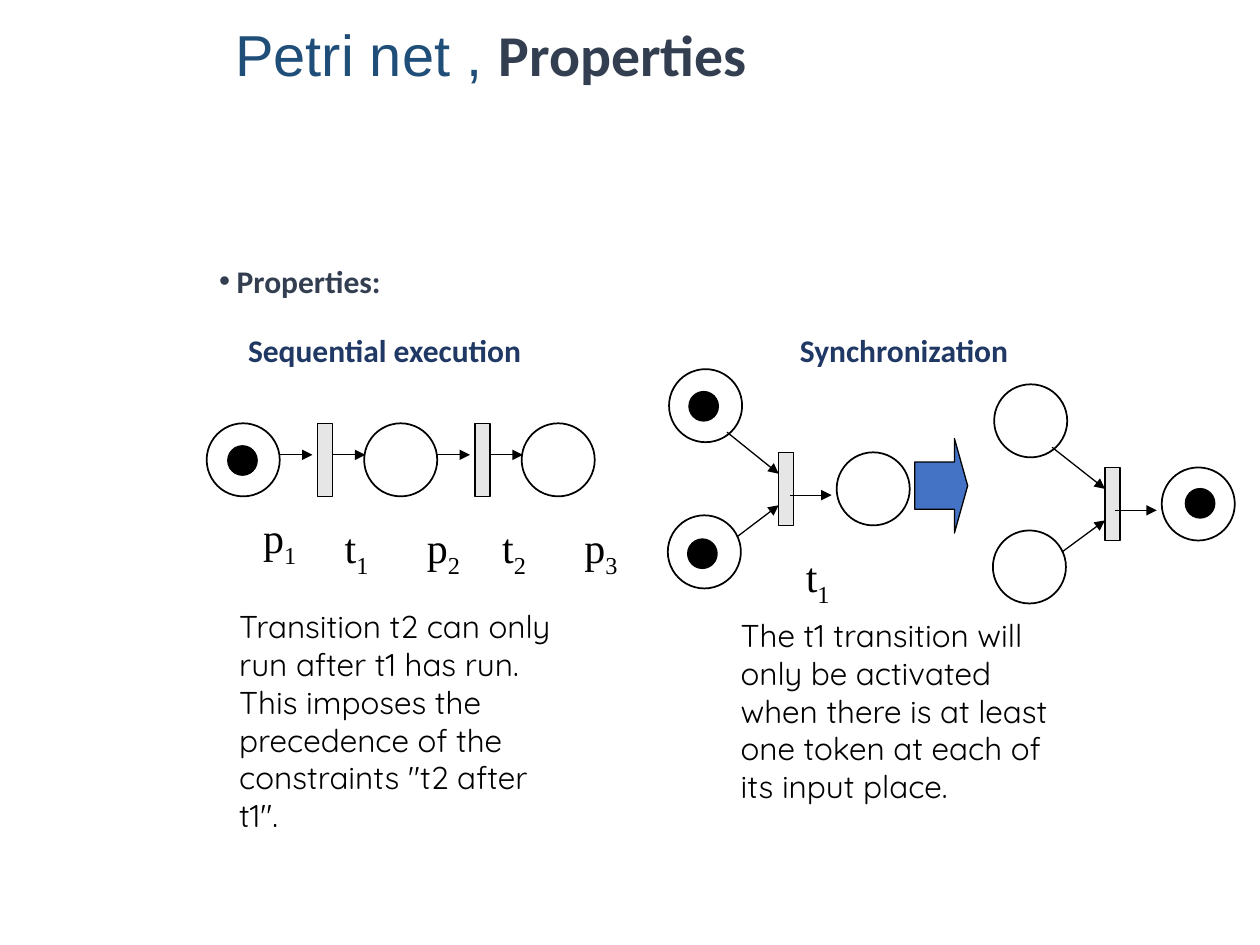
from lxml import etree
from pptx import Presentation
from pptx.dml.color import RGBColor
from pptx.enum.shapes import MSO_CONNECTOR, MSO_SHAPE
from pptx.enum.text import MSO_ANCHOR, PP_ALIGN
from pptx.oxml.ns import qn
from pptx.util import Inches, Pt

OVAL, RECTANGLE, ARROW = MSO_SHAPE.OVAL, MSO_SHAPE.RECTANGLE, MSO_SHAPE.RIGHT_ARROW
STRAIGHT = MSO_CONNECTOR.STRAIGHT
LEFT, CENTER, TOP = PP_ALIGN.LEFT, PP_ALIGN.CENTER, MSO_ANCHOR.TOP

THEME = {
    "black": "000000", "bar": "E7E6E6", "arrow": "4472C4",
    "thin": 0.75, "line": 1,
    "title": {"name": "Arial", "size": 33, "color": "1F4E79"},
    "title_bold": {"name": "Calibri", "size": 33, "color": "333F50", "bold": True},
    "bullet": {"name": "Calibri", "size": 18, "color": "333F50", "bold": True},
    "heading": {"name": "Calibri", "size": 18, "color": "203864", "bold": True},
    "body": {"name": "Quicksand", "size": 18, "color": "000000"},
    "label": {"name": "Times New Roman", "size": 24, "color": "000000"},
}

# Texts: box (left, top, width, height), then runs of (text, style)
TEXTS = [
    ((1.77, 0.1, 8.23, 1.19), [("Petri net , ", "title"), ("Properties", "title_bold")]),
    ((1.87, 2.58, 2.39, 0.4), [("Sequential execution", "heading")]),
    ((6.25, 2.58, 2.12, 0.4), [("Synchronization", "heading")]),
    ((1.8, 4.77, 2.81, 2.22), [(
        "Transition t2 can only run after t1 has run. This imposes the "
        'precedence of the constraints "t2 after t1".', "body")]),
    ((5.78, 4.84, 2.81, 1.92), [(
        "The t1 transition will only be activated when there is at least "
        "one token at each of its input place.", "body")]),
]
BULLET = ((1.64, 2.03, 1.95, 0.4), [("Properties:", "bullet")])

# Net elements: (left, top) of places, tokens and transitions
PLACE, TOKEN, BAR = (0.58, 0.58), (0.23, 0.23), (0.12, 0.58)
SEQUENCE_TOP, SEQUENCE_STEP = 3.36, 1.25
PLACES = [(1.64 + SEQUENCE_STEP * i, SEQUENCE_TOP) for i in range(3)] + [
    (5.31, 2.93), (5.3, 4.09), (6.64, 3.59),
    (7.89, 3.05), (7.88, 4.21), (9.22, 3.71)]
TOKENS = [(1.81, 3.54), (5.47, 3.11), (5.46, 4.28), (9.41, 3.88)]
BARS = [(2.52 + SEQUENCE_STEP * i, SEQUENCE_TOP) for i in range(2)] + [
    (6.18, 3.59), (8.77, 3.71)]
NEXT_STATE = (7.26, 3.48, 0.42, 0.75)

# Arcs: (from x, from y, to x, to y)
ARCS = [(x + SEQUENCE_STEP * i, 3.61, x + SEQUENCE_STEP * i + 0.26, 3.61)
        for i in range(2) for x in (2.22, 2.64)] + [
    (5.77, 3.43, 6.18, 3.76), (5.85, 4.26, 6.18, 4.01), (6.27, 3.93, 6.6, 3.93),
    (8.35, 3.55, 8.77, 3.88), (8.43, 4.38, 8.77, 4.13), (8.85, 4.05, 9.18, 4.05)]

# Labels: letter, subscript, centre x, top
LABELS = [("p", "1", 2.22, 4.06), ("t", "1", 2.83, 4.14), ("p", "2", 3.52, 4.14),
          ("t", "2", 4.08, 4.14), ("p", "3", 4.77, 4.14), ("t", "1", 6.49, 4.37)]
LABEL_SIZE = (0.6, 0.45)


def inches(values):
    return [Inches(value) for value in values]


def rgb(name):
    return RGBColor.from_string(THEME.get(name, name))


def add_run(paragraph, text, style):
    run = paragraph.add_run()
    run.text = text
    formats = dict(THEME[style])
    run.font.color.rgb = rgb(formats.pop("color"))
    formats["size"] = Pt(formats["size"])
    for name, value in formats.items():
        setattr(run.font, name, value)
    return run


def add_text(slide, box, runs, align=LEFT, **frame_formats):
    frame = slide.shapes.add_textbox(*inches(box)).text_frame
    formats = {"word_wrap": True, "vertical_anchor": TOP, **frame_formats}
    for name, value in formats.items():
        setattr(frame, name, value)
    paragraph = frame.paragraphs[0]
    paragraph.alignment = align
    for text, style in runs:
        add_run(paragraph, text, style)
    return paragraph


def add_bullet(paragraph, indent):
    properties = paragraph._p.get_or_add_pPr()
    properties.set("marL", str(Inches(indent)))
    properties.set("indent", str(-Inches(indent)))
    etree.SubElement(properties, qn("a:buFont"), typeface="Arial")
    etree.SubElement(properties, qn("a:buChar"), char="•")


def add_label(slide, letter, subscript, center, top):
    width, height = LABEL_SIZE
    paragraph = add_text(slide, (center - width / 2, top, width, height),
                         [(letter, "label")], CENTER, margin_left=0,
                         margin_right=0, margin_top=0, margin_bottom=0)
    run = add_run(paragraph, subscript, "label")
    run.font._element.set("baseline", "-25000")


def add_figure(slide, kind, box, fill, width):
    shape = slide.shapes.add_shape(kind, *inches(box))
    shape.shadow.inherit = False
    if fill:
        shape.fill.solid()
        shape.fill.fore_color.rgb = rgb(fill)
    else:
        shape.fill.background()
    shape.line.color.rgb = rgb("black")
    shape.line.width = Pt(THEME[width])
    return shape


def add_arc(slide, ends):
    connector = slide.shapes.add_connector(STRAIGHT, *inches(ends))
    connector.line.color.rgb = rgb("black")
    connector.line.width = Pt(THEME["thin"])
    etree.SubElement(connector.line._get_or_add_ln(), qn("a:tailEnd"), type="triangle")
    etree.SubElement(connector._element.spPr, qn("a:effectLst"))


def main():
    presentation = Presentation()
    presentation.slide_width, presentation.slide_height = inches((10, 7.5))
    slide = presentation.slides.add_slide(presentation.slide_layouts[6])

    # Title, headings and explanations
    for box, runs in TEXTS:
        add_text(slide, box, runs)
    add_bullet(add_text(slide, *BULLET), 0.14)

    # Places, transitions and tokens
    for positions, size, kind, fill, width in (
            (PLACES, PLACE, OVAL, None, "line"),
            (BARS, BAR, RECTANGLE, "bar", "thin"),
            (TOKENS, TOKEN, OVAL, "black", "line")):
        for position in positions:
            add_figure(slide, kind, position + size, fill, width)

    # Arcs and the step to the next state
    for ends in ARCS:
        add_arc(slide, ends)
    arrow = add_figure(slide, ARROW, NEXT_STATE, "arrow", "thin")
    arrow.adjustments[0], arrow.adjustments[1] = 0.5, 0.25

    # Names of places and transitions
    for label in LABELS:
        add_label(slide, *label)

    presentation.save("out.pptx")


if __name__ == "__main__":
    main()
